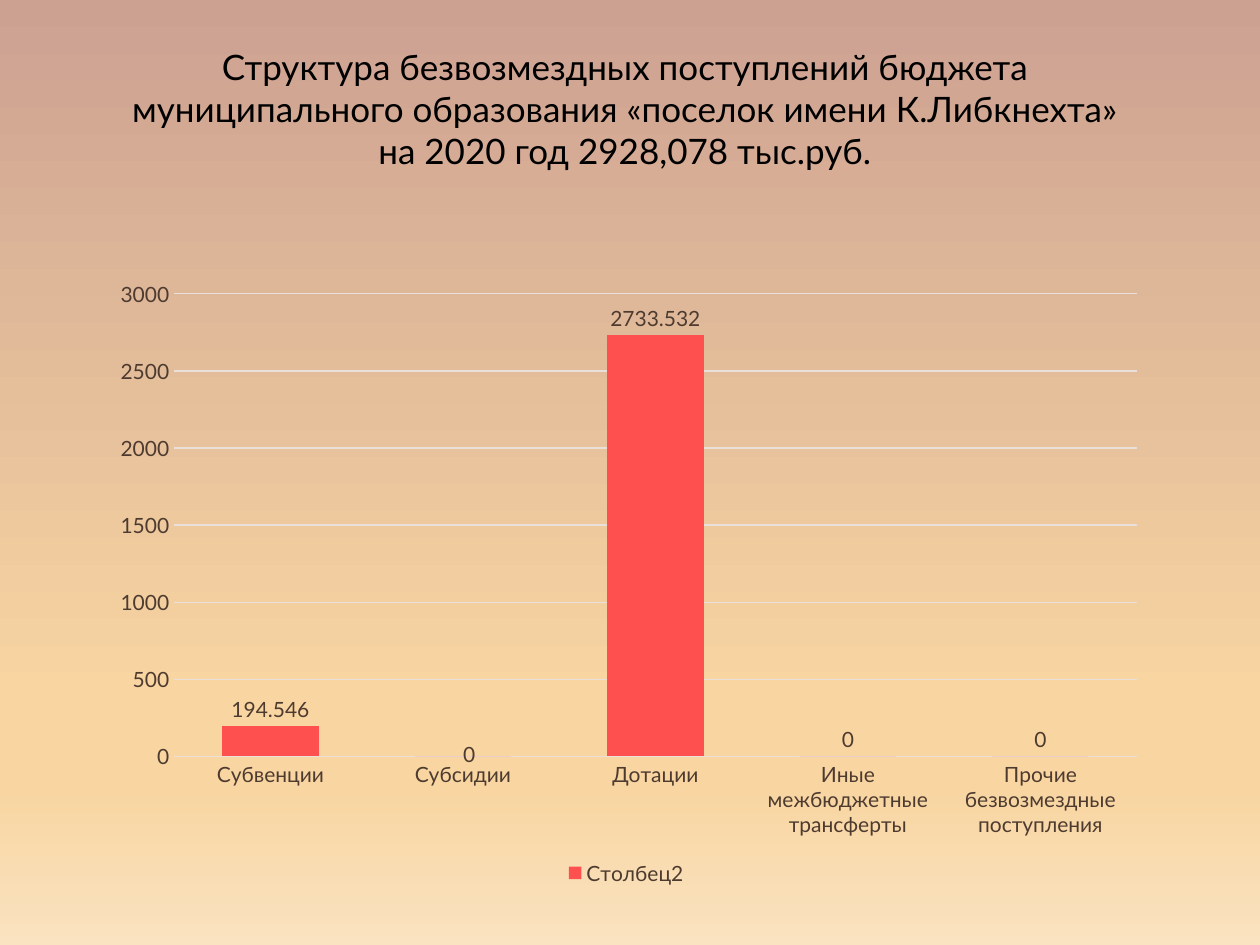
"""Build a slide with a column chart of the settlement's budget transfers."""
from typing import NamedTuple

from lxml import etree
from pptx import Presentation
from pptx import util as u
from pptx.chart.data import CategoryChartData
from pptx.dml.color import RGBColor
from pptx.enum import chart as charts
from pptx.enum import text
from pptx.oxml.ns import qn

FONT = "Lato"
BROWN, PALE, RED, BLACK = "4E3B30", "E9E0DB", "FF5050", "000000"


class Stop(NamedTuple):
    percent: int
    color: str


class Transfer(NamedTuple):
    name: str
    amount: float


STOPS = [Stop(0, "CCA192"), Stop(74, "F8D5A1"), Stop(83, "F8D5A1"), Stop(100, "FAE3C0")]
TRANSFERS = [
    Transfer("Субвенции", 194.546),
    Transfer("Субсидии", 0),
    Transfer("Дотации", 2733.532),
    Transfer("Иные межбюджетные трансферты", 0),
    Transfer("Прочие безвозмездные поступления", 0),
]
TITLE = [
    "Структура безвозмездных поступлений бюджета муниципального образования «поселок имени К.Либкнехта»",
    "на 2020 год 2928,078 тыс.руб.",
]


def rgb(color: str) -> RGBColor:
    return RGBColor.from_string(color)


def set_font(font, size: float, color: str) -> None:
    font.name, font.size, font.bold = FONT, u.Pt(size), False
    font.color.rgb = rgb(color)


def set_line(line) -> None:
    line.color.rgb = rgb(PALE)
    line.width = u.Pt(0.75)


def paint_background(page) -> None:
    fill = page.background.fill
    fill.gradient()
    fill.gradient_angle = 270
    stop_list = page.element.find(".//" + qn("a:gsLst"))
    for old in list(stop_list):
        stop_list.remove(old)
    for stop in STOPS:
        node = etree.SubElement(stop_list, qn("a:gs"), pos=str(stop.percent * 1000))
        etree.SubElement(node, qn("a:srgbClr"), val=stop.color)


def place_manually(parent, index: int, **values) -> None:
    for old in parent.findall(qn("c:layout")):
        parent.remove(old)
    layout = etree.Element(qn("c:layout"))
    manual = etree.SubElement(layout, qn("c:manualLayout"))
    for tag, value in values.items():
        etree.SubElement(manual, qn(f"c:{tag}"), val=str(value))
    parent.insert(index, layout)


def add_title(page) -> None:
    box = page.shapes.title
    box.left, box.top, box.width, box.height = u.Cm(1.78), u.Cm(0.79), u.Cm(21.64), u.Cm(2.82)
    frame = box.text_frame
    frame.text = "\n".join(TITLE)
    frame.word_wrap = True
    frame.vertical_anchor = text.MSO_ANCHOR.TOP
    frame.auto_size = text.MSO_AUTO_SIZE.SHAPE_TO_FIT_TEXT
    for para in frame.paragraphs:
        para.alignment = text.PP_ALIGN.CENTER
        set_font(para.font, 20, BLACK)


def format_axes(chart) -> None:
    for axis in (chart.category_axis, chart.value_axis):
        axis.major_tick_mark = axis.minor_tick_mark = charts.XL_TICK_MARK.NONE
        set_font(axis.tick_labels.font, 12, BROWN)
    set_line(chart.category_axis.format.line)
    values = chart.value_axis
    values.minimum_scale, values.maximum_scale, values.major_unit = 0, 3000, 500
    values.format.line.fill.background()
    set_line(values.major_gridlines.format.line)


def format_columns(plot) -> None:
    plot.gap_width, plot.overlap, plot.vary_by_categories = 100, -24, False
    series = plot.series[0]
    series.format.fill.solid()
    series.format.fill.fore_color.rgb = rgb(RED)
    labels = series.data_labels
    labels.show_value = True
    labels.position = charts.XL_LABEL_POSITION.OUTSIDE_END
    set_font(labels.font, 12, BROWN)
    moved = series.points[1].data_label
    moved.position = charts.XL_LABEL_POSITION.OUTSIDE_END
    set_font(moved.font, 12, BROWN)


def add_transfer_chart(page) -> None:
    data = CategoryChartData()
    data.categories = [item.name for item in TRANSFERS]
    data.add_series("Столбец2", [item.amount for item in TRANSFERS])
    chart = page.shapes.add_chart(
        charts.XL_CHART_TYPE.COLUMN_CLUSTERED,
        u.Cm(1.93), u.Cm(4.72), u.Cm(21.39), u.Cm(13.23), data,
    ).chart
    chart.has_title = False
    set_font(chart.font, 10, BLACK)
    chart.has_legend = True
    chart.legend.position = charts.XL_LEGEND_POSITION.BOTTOM
    chart.legend.include_in_layout = False
    set_font(chart.legend.font, 12, BROWN)
    format_axes(chart)
    format_columns(chart.plots[0])
    area = chart.element.find(".//" + qn("c:plotArea"))
    place_manually(area, 0, layoutTarget="inner", xMode="edge", yMode="edge",
                   x=0.074, y=0.091, w=0.907, h=0.705)
    place_manually(area.find(".//" + qn("c:dLbl")), 1, x=0.006, y=0.023)


def main() -> None:
    deck = Presentation()
    deck.slide_width, deck.slide_height = u.Cm(25.4), u.Cm(19.05)
    page = deck.slides.add_slide(deck.slide_layouts.get_by_name("Title Only"))
    paint_background(page)
    add_transfer_chart(page)
    add_title(page)
    deck.save("out.pptx")


if __name__ == "__main__":
    main()
